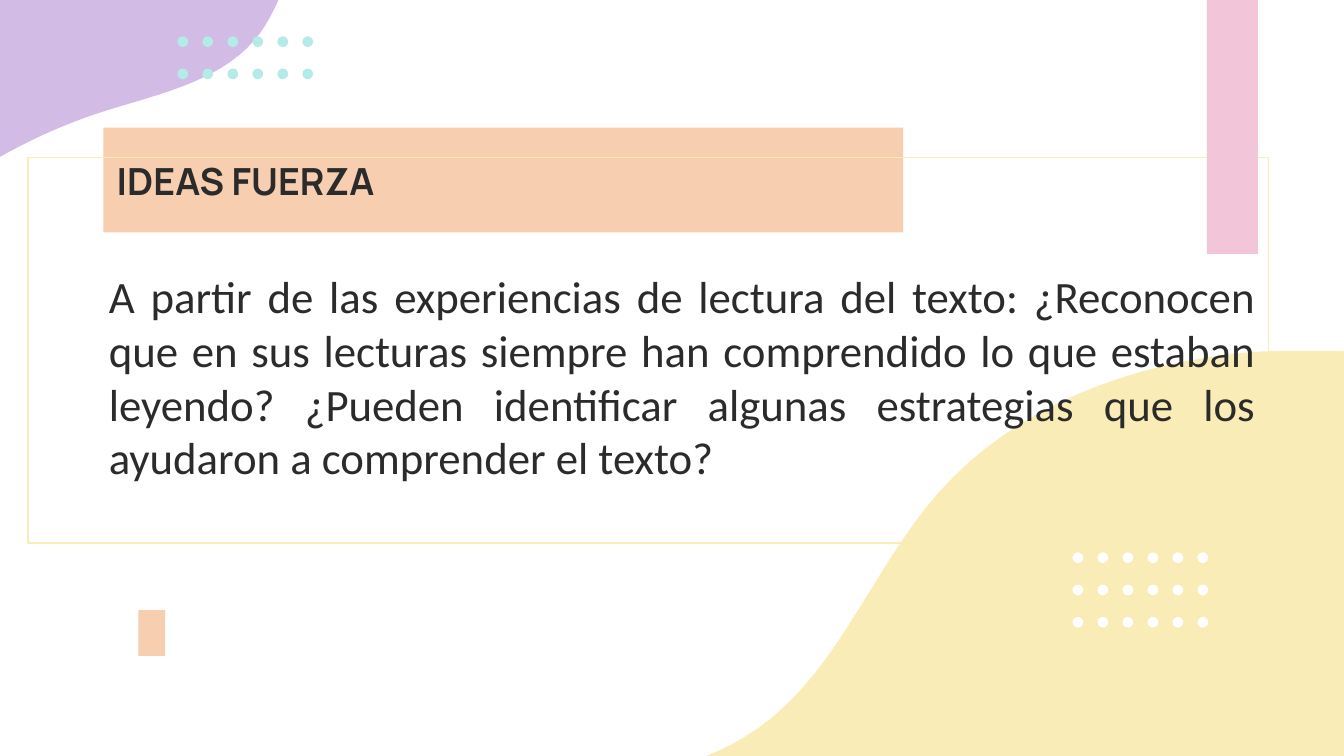
import dataclasses

import pptx
import pptx.dml.color
import pptx.enum.shapes
import pptx.enum.text
import pptx.util
from pptx.util import Inches

RGBColor = pptx.dml.color.RGBColor
LILAC = RGBColor(0xD2, 0xBC, 0xE6)
AQUA = RGBColor(0xB5, 0xEB, 0xE7)
CREAM = RGBColor(0xFA, 0xEC, 0xB6)
PEACH = RGBColor(0xF7, 0xCF, 0xB0)
PINK = RGBColor(0xF3, 0xC5, 0xD8)
WHITE = RGBColor(0xFF, 0xFF, 0xFF)
INK = RGBColor(0x2B, 0x2B, 0x2B)

RECTANGLE = pptx.enum.shapes.MSO_SHAPE.RECTANGLE
OVAL = pptx.enum.shapes.MSO_SHAPE.OVAL
ALIGN = pptx.enum.text.PP_ALIGN
ANCHOR = pptx.enum.text.MSO_ANCHOR

Point = tuple[float, float]
CURVE_STEPS = 16


@dataclasses.dataclass
class Blob:
    """Straight corners, then cubic curves as (control, control, end)."""
    corners: list[Point]
    curves: list[tuple[Point, Point, Point]]
    color: RGBColor


@dataclasses.dataclass
class DotGrid:
    left: float
    top: float
    rows: int
    color: RGBColor
    columns: int = 6
    column_step: float = 0.93 / 5
    row_step: float = 0.24
    size: float = 0.08


@dataclasses.dataclass
class TextStyle:
    font: str
    size: float
    bold: bool
    align: ALIGN
    anchor: ANCHOR
    left_inset: float = 0.1
    bottom_inset: float = 0.1


LILAC_BLOB = Blob(
    [(-0.45, 1.46), (-0.45, -1.84), (3.89, -1.84), (3.89, -0.99)],
    [((3.73, -0.82), (3.52, -0.7), (3.28, -0.68)),
     ((3.25, -0.68), (3.21, -0.67), (3.17, -0.67)),
     ((3.06, -0.67), (2.94, -0.69), (2.83, -0.69)),
     ((2.71, -0.69), (2.58, -0.67), (2.48, -0.61)),
     ((2.18, -0.44), (2.14, -0.04), (1.94, 0.24)),
     ((1.69, 0.59), (1.22, 0.69), (0.8, 0.82)),
     ((0.35, 0.96), (-0.07, 1.18), (-0.45, 1.46))],
    LILAC)
CREAM_BLOB = Blob(
    [(3.31, 5.69), (3.31, 7.99), (10.13, 7.99), (10.13, 2.62)],
    [((10, 2.61), (9.87, 2.61), (9.74, 2.61)),
     ((9.6, 2.61), (9.46, 2.61), (9.32, 2.62)),
     ((8.45, 2.69), (7.56, 3.01), (6.98, 3.67)),
     ((6.46, 4.26), (6.21, 5.09), (5.53, 5.49)),
     ((5.19, 5.7), (4.81, 5.75), (4.41, 5.75)),
     ((4.05, 5.75), (3.67, 5.71), (3.31, 5.69))],
    CREAM)

TITLE = "IDEAS FUERZA"
QUESTIONS = (
    "A partir de las experiencias de lectura del texto: ¿Reconocen que en sus "
    "lecturas siempre han comprendido lo que estaban leyendo? ¿Pueden identificar "
    "algunas estrategias que los ayudaron a comprender el texto?")
TITLE_STYLE = TextStyle("Manrope", 20, True, ALIGN.LEFT, ANCHOR.MIDDLE)
QUESTIONS_STYLE = TextStyle("Calibri", 24, False, ALIGN.JUSTIFY, ANCHOR.BOTTOM,
                            left_inset=0.6, bottom_inset=0.44)


def curve_points(start: Point, first: Point, second: Point, end: Point) -> list[Point]:
    points = []
    for step in range(1, CURVE_STEPS + 1):
        t = step / CURVE_STEPS
        weights = ((1 - t) ** 3, 3 * t * (1 - t) ** 2, 3 * t * t * (1 - t), t ** 3)
        anchors = (start, first, second, end)
        points.append((sum(w * p[0] for w, p in zip(weights, anchors)),
                       sum(w * p[1] for w, p in zip(weights, anchors))))
    return points


def paint(shape, fill: RGBColor) -> None:
    shape.shadow.inherit = False
    shape.fill.solid()
    shape.fill.fore_color.rgb = fill
    shape.line.fill.background()


def draw_blob(page, blob: Blob) -> None:
    points = list(blob.corners)
    for first, second, end in blob.curves:
        points += curve_points(points[-1], first, second, end)
    outline = [(Inches(x), Inches(y)) for x, y in points]
    builder = page.shapes.build_freeform(*outline[0])
    builder.add_line_segments(outline[1:], close=True)
    paint(builder.convert_to_shape(), blob.color)


def draw_shape(page, kind, left: float, top: float, width: float, height: float,
               fill: RGBColor):
    shape = page.shapes.add_shape(kind, Inches(left), Inches(top),
                                  Inches(width), Inches(height))
    paint(shape, fill)
    return shape


def draw_dots(page, grid: DotGrid) -> None:
    for row in range(grid.rows):
        for column in range(grid.columns):
            draw_shape(page, OVAL, grid.left + column * grid.column_step,
                       grid.top + row * grid.row_step, grid.size, grid.size, grid.color)


def write(shape, text: str, style: TextStyle) -> None:
    frame = shape.text_frame
    frame.word_wrap = True
    frame.vertical_anchor = style.anchor
    frame.margin_left = Inches(style.left_inset)
    frame.margin_right = frame.margin_top = Inches(0.1)
    frame.margin_bottom = Inches(style.bottom_inset)
    frame.text = text
    para = frame.paragraphs[0]
    para.alignment = style.align
    font = para.runs[0].font
    font.name = style.font
    font.size = pptx.util.Pt(style.size)
    font.bold = style.bold
    font.color.rgb = INK


def main() -> None:
    deck = pptx.Presentation()
    # Widescreen, 16:9
    deck.slide_width = Inches(10)
    deck.slide_height = Inches(10 * 9 / 16)
    page = deck.slides.add_slide(deck.slide_layouts[6])

    # Background decoration
    draw_blob(page, LILAC_BLOB)
    draw_dots(page, DotGrid(1.32, 0.27, 2, AQUA))
    draw_blob(page, CREAM_BLOB)

    # Title band
    title = draw_shape(page, RECTANGLE, 0.77, 0.95, 5.95, 0.78, PEACH)
    write(title, TITLE, TITLE_STYLE)

    # Framed questions
    questions = draw_shape(page, RECTANGLE, 0.21, 1.17, 9.23, 2.87, WHITE)
    questions.fill.background()
    questions.line.color.rgb = CREAM
    questions.line.width = pptx.util.Pt(0.75)
    write(questions, QUESTIONS, QUESTIONS_STYLE)

    # Foreground accents
    draw_shape(page, RECTANGLE, 8.98, 0, 0.38, 1.89, PINK)
    draw_dots(page, DotGrid(7.98, 4.11, 3, WHITE))
    draw_shape(page, RECTANGLE, 1.03, 4.54, 0.2, 0.34, PEACH)

    deck.save("out.pptx")


if __name__ == "__main__":
    main()
